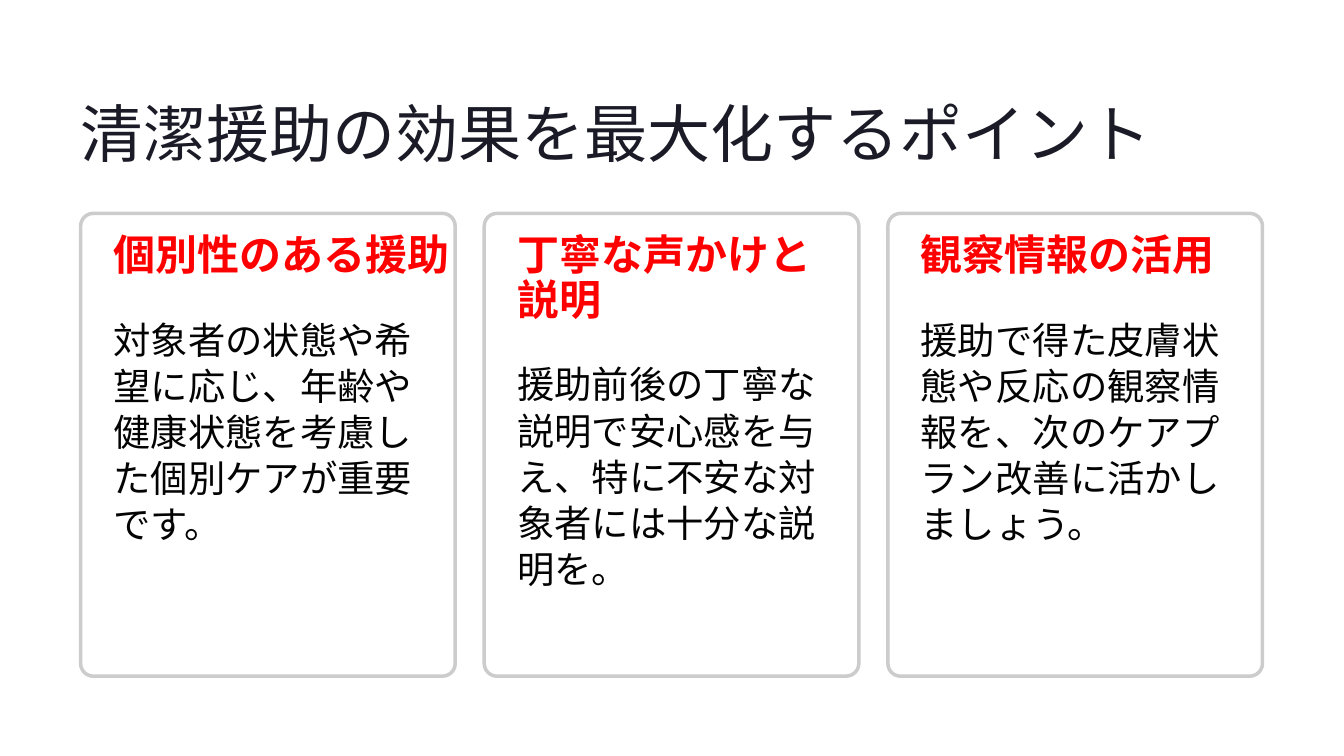
from dataclasses import dataclass

from pptx import Presentation
from pptx.dml.color import RGBColor
from pptx.enum.shapes import MSO_SHAPE
from pptx.slide import Slide
from pptx.util import Inches, Pt


@dataclass(frozen=True)
class TextStyle:
    """Type settings for one level of text."""
    font: str
    size: float
    leading: float
    color: str
    bold: bool = False


@dataclass(frozen=True)
class Theme:
    """Colours and type of the slide."""
    title: TextStyle = TextStyle("Inter", 54, 77, "1B1B27")
    heading: TextStyle = TextStyle("Inter", 36, 38.5, "FF0000", True)
    body: TextStyle = TextStyle("Cabin", 32, 39.5, "030303")
    card_fill: str = "FFFFFF"
    card_line: str = "CCCCCC"
    card_line_width: float = 3


@dataclass(frozen=True)
class Card:
    """One key point with its explanation."""
    heading: str
    body: str
    heading_lines: int = 1


THEME = Theme()
MARGIN, CONTENT_WIDTH = 0.96, 14.07
TITLE_TOP, TITLE_HEIGHT = 0.96, 2.15
CARD_TOP, CARD_WIDTH, CARD_HEIGHT = 2.54, 4.46, 5.51
CARD_INSET = 0.39
TEXT_WIDTH = CARD_WIDTH - 2 * CARD_INSET
ONE_LINE_WIDTH = CARD_WIDTH - CARD_INSET
HEADING_TOP, HEADING_LINE, HEADING_GAP = 2.79, 0.53, 0.44
BODY_HEIGHT = 2.2

CARDS = [
    Card("個別性のある援助", "対象者の状態や希望に応じ、年齢や健康状態を考慮した個別ケアが重要です。"),
    Card("丁寧な声かけと説明", "援助前後の丁寧な説明で安心感を与え、特に不安な対象者には十分な説明を。", 2),
    Card("観察情報の活用", "援助で得た皮膚状態や反応の観察情報を、次のケアプラン改善に活かしましょう。"),
]
CARD_STEP = (CONTENT_WIDTH - CARD_WIDTH) / (len(CARDS) - 1)


def add_text(page: Slide, text: str, style: TextStyle, left: float, top: float,
             width: float, height: float) -> None:
    """Place a wrapping text box without insets."""
    box = page.shapes.add_textbox(Inches(left), Inches(top), Inches(width), Inches(height))
    frame = box.text_frame
    frame.margin_left = frame.margin_right = frame.margin_top = frame.margin_bottom = 0
    frame.word_wrap = True
    para = frame.paragraphs[0]
    para.text = text
    para.line_spacing = Pt(style.leading)
    para.font.name = style.font
    para.font.size = Pt(style.size)
    para.font.bold = style.bold
    para.font.color.rgb = RGBColor.from_string(style.color)


def add_card(page: Slide, card: Card, left: float) -> None:
    """Draw a rounded card with its heading and body."""
    panel = page.shapes.add_shape(MSO_SHAPE.ROUNDED_RECTANGLE, Inches(left), Inches(CARD_TOP),
                                  Inches(CARD_WIDTH), Inches(CARD_HEIGHT))
    panel.adjustments[0] = 0.034
    panel.shadow.inherit = False
    panel.fill.solid()
    panel.fill.fore_color.rgb = RGBColor.from_string(THEME.card_fill)
    panel.line.color.rgb = RGBColor.from_string(THEME.card_line)
    panel.line.width = Pt(THEME.card_line_width)

    text_left = left + CARD_INSET
    heading_width = ONE_LINE_WIDTH if card.heading_lines == 1 else TEXT_WIDTH
    heading_height = card.heading_lines * HEADING_LINE
    body_top = HEADING_TOP + heading_height + HEADING_GAP
    add_text(page, card.heading, THEME.heading, text_left, HEADING_TOP,
             heading_width, heading_height)
    add_text(page, card.body, THEME.body, text_left, body_top, TEXT_WIDTH, BODY_HEIGHT)


def main() -> None:
    """Build and save the slide."""
    deck = Presentation()
    deck.slide_width, deck.slide_height = Inches(16), Inches(9)
    page = deck.slides.add_slide(deck.slide_layouts[6])
    add_text(page, "清潔援助の効果を最大化するポイント", THEME.title,
             MARGIN, TITLE_TOP, CONTENT_WIDTH, TITLE_HEIGHT)
    for index, card in enumerate(CARDS):
        add_card(page, card, MARGIN + index * CARD_STEP)
    deck.save("out.pptx")


if __name__ == "__main__":
    main()
